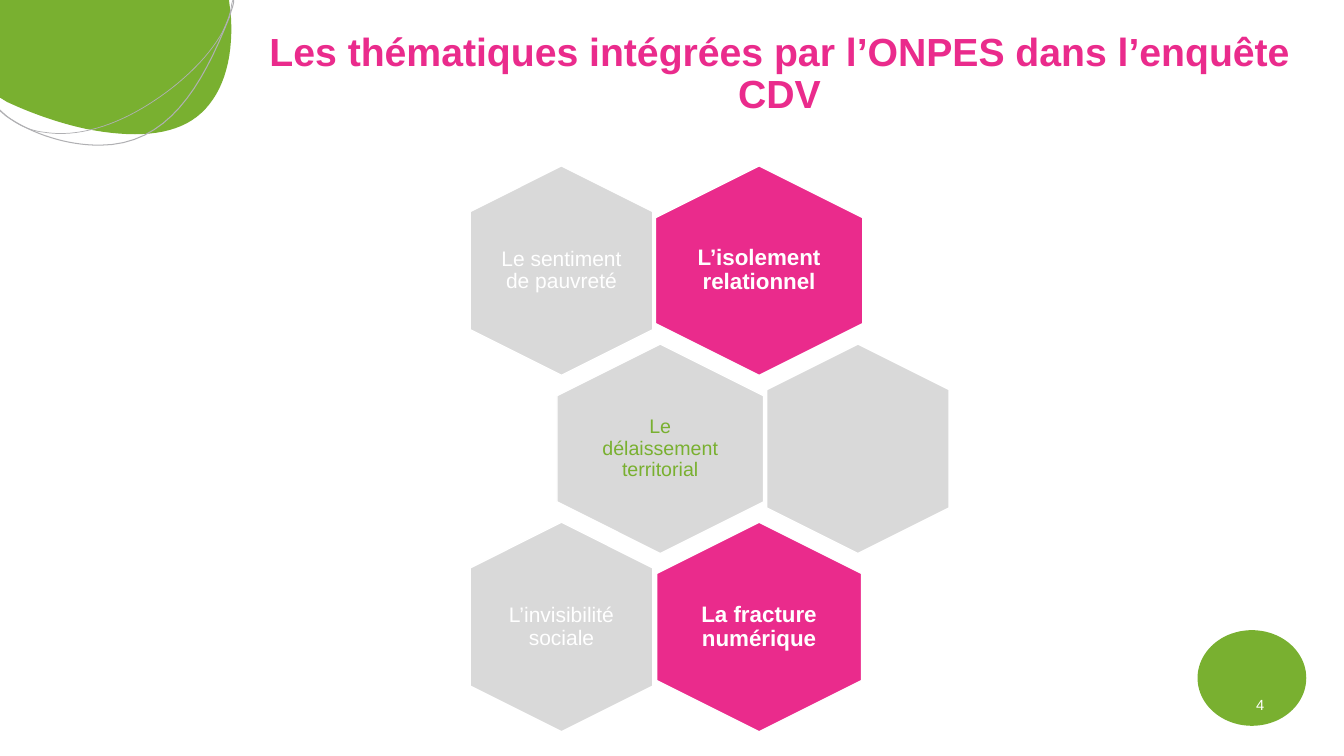
from pptx import Presentation
from pptx.dml.color import RGBColor
from pptx.enum.shapes import MSO_SHAPE
from pptx.enum.text import MSO_ANCHOR, PP_ALIGN
from pptx.util import Cm, Pt

GREEN, PINK, GREY, WHITE, SILVER = "79B030", "EA2B8C", "D9D9D9", "FFFFFF", "B0B0B3"

CORNER_BLOB = [
    (0, 0), (5.77, 0), (5.82, 0.41),
    ((5.89, 1.55), (5.59, 2.46), (4.95, 2.95)),
    ((4.32, 3.43), (3.35, 3.48), (2.18, 3.25)),
    ((1.47, 3.1), (0.76, 2.84), (0.18, 2.57)),
    (0, 2.46),
]
INNER_ARC = [
    (5.87, 0), (5.84, 0.1),
    ((5.82, 0.33), (5.72, 0.58), (5.59, 0.84)),
    ((5.23, 1.47), (4.55, 2.13), (3.73, 2.64)),
    ((2.92, 3.15), (1.96, 3.48), (1.09, 3.33)),
    ((0.66, 3.28), (0.3, 3.07), (0, 2.77)),
]
OUTER_ARC = [
    (5.89, 0), (5.89, 0.05),
    ((5.87, 0.18), (5.82, 0.28), (5.79, 0.41)),
    ((5.08, 2.21), (4.22, 3.66), (2.51, 3.66)),
    ((1.68, 3.66), (0.81, 3.38), (0.15, 2.92)),
    (0, 2.79),
]

HEX_LENGTH = 5.28
COL_STEP, ROW_STEP = 4.98, 4.49
THEMES = [
    (0, 1, 5.23, PINK, "L’isolement relationnel", 16, WHITE, True),
    (0, 0, 4.6, GREY, "Le sentiment de pauvreté", 15, WHITE, False),
    (1, 0, 5.21, GREY, "Le délaissement territorial", 14, GREEN, False),
    (1, 1, 4.6, GREY, "", 14, WHITE, False),
    (2, 1, 5.16, PINK, "La fracture numérique", 16, WHITE, True),
    (2, 0, 4.6, GREY, "L’invisibilité sociale", 15, WHITE, False),
]


def rgb(color):
    return RGBColor.from_string(color)


def paint(sp, fill=None, line=None, width=1):
    sp.shadow.inherit = False
    if fill:
        sp.fill.solid()
        sp.fill.fore_color.rgb = rgb(fill)
    else:
        sp.fill.background()
    if line:
        sp.line.color.rgb = rgb(line)
        sp.line.width = Pt(width)
    else:
        sp.line.fill.background()


def write(tf, text, size, color, bold=False, spacing=None):
    tf.text = text
    tf.word_wrap = True
    p = tf.paragraphs[0]
    p.alignment = PP_ALIGN.CENTER
    p.line_spacing = spacing
    font = p.runs[0].font
    font.name, font.size, font.bold = "Arial", Pt(size), bold
    font.color.rgb = rgb(color)


def add_text(s, left, top, width, height, *style, **options):
    tf = s.shapes.add_textbox(Cm(left), Cm(top), Cm(width), Cm(height)).text_frame
    tf.margin_left = tf.margin_right = tf.margin_top = tf.margin_bottom = 0
    tf.vertical_anchor = MSO_ANCHOR.MIDDLE
    write(tf, *style, **options)


def flatten(outline, steps=16):
    points = []
    for part in outline:
        if len(part) == 2:
            points.append(part)
            continue
        curve = (points[-1], *part)
        for i in range(1, steps + 1):
            t = i / steps
            weights = ((1 - t) ** 3, 3 * t * (1 - t) ** 2, 3 * t * t * (1 - t), t ** 3)
            points.append(tuple(sum(w * c[axis] for w, c in zip(weights, curve))
                                for axis in (0, 1)))
    return [(Cm(x), Cm(y)) for x, y in points]


def add_outline(s, outline, close=False, **style):
    points = flatten(outline)
    builder = s.shapes.build_freeform(*points[0])
    builder.add_line_segments(points[1:], close=close)
    paint(builder.convert_to_shape(), **style)


def add_theme(s, row, col, breadth, fill, text, size, color, bold):
    x = 14.15 + COL_STEP * (col + row % 2 / 2)
    y = 6.82 + ROW_STEP * row
    sp = s.shapes.add_shape(MSO_SHAPE.HEXAGON, Cm(x - HEX_LENGTH / 2), Cm(y - breadth / 2),
                            Cm(HEX_LENGTH), Cm(breadth))
    sp.rotation = 90
    sp.adjustments[0] = 0.25
    paint(sp, fill, WHITE)
    if text:
        add_text(s, x - 1.58, y - 1.8, 3.16, 3.6, text, size, color, bold, spacing=0.9)


def add_title(s, text):
    title = s.shapes.title
    title.left, title.top, title.width, title.height = Cm(5.69), Cm(0.69), Cm(27.91), Cm(2.41)
    title.text_frame.vertical_anchor = MSO_ANCHOR.TOP
    write(title.text_frame, text, 28, PINK, True, 0.9)


def main():
    prs = Presentation()
    prs.slide_width, prs.slide_height = Cm(33.87), Cm(19.05)
    s = prs.slides.add_slide(prs.slide_layouts[5])

    add_outline(s, CORNER_BLOB, close=True, fill=GREEN)
    add_outline(s, INNER_ARC, line=SILVER, width=0.5)
    add_outline(s, OUTER_ARC, line=SILVER, width=0.75)
    badge = s.shapes.add_shape(MSO_SHAPE.OVAL, Cm(30.18), Cm(15.88), Cm(2.74), Cm(2.41))
    paint(badge, GREEN)

    add_title(s, "Les thématiques intégrées par l’ONPES dans l’enquête CDV")
    add_text(s, 30.96, 17.25, 1.6, 1.02, "4", 10.5, WHITE)
    for theme in THEMES:
        add_theme(s, *theme)
    prs.save("out.pptx")


if __name__ == "__main__":
    main()
